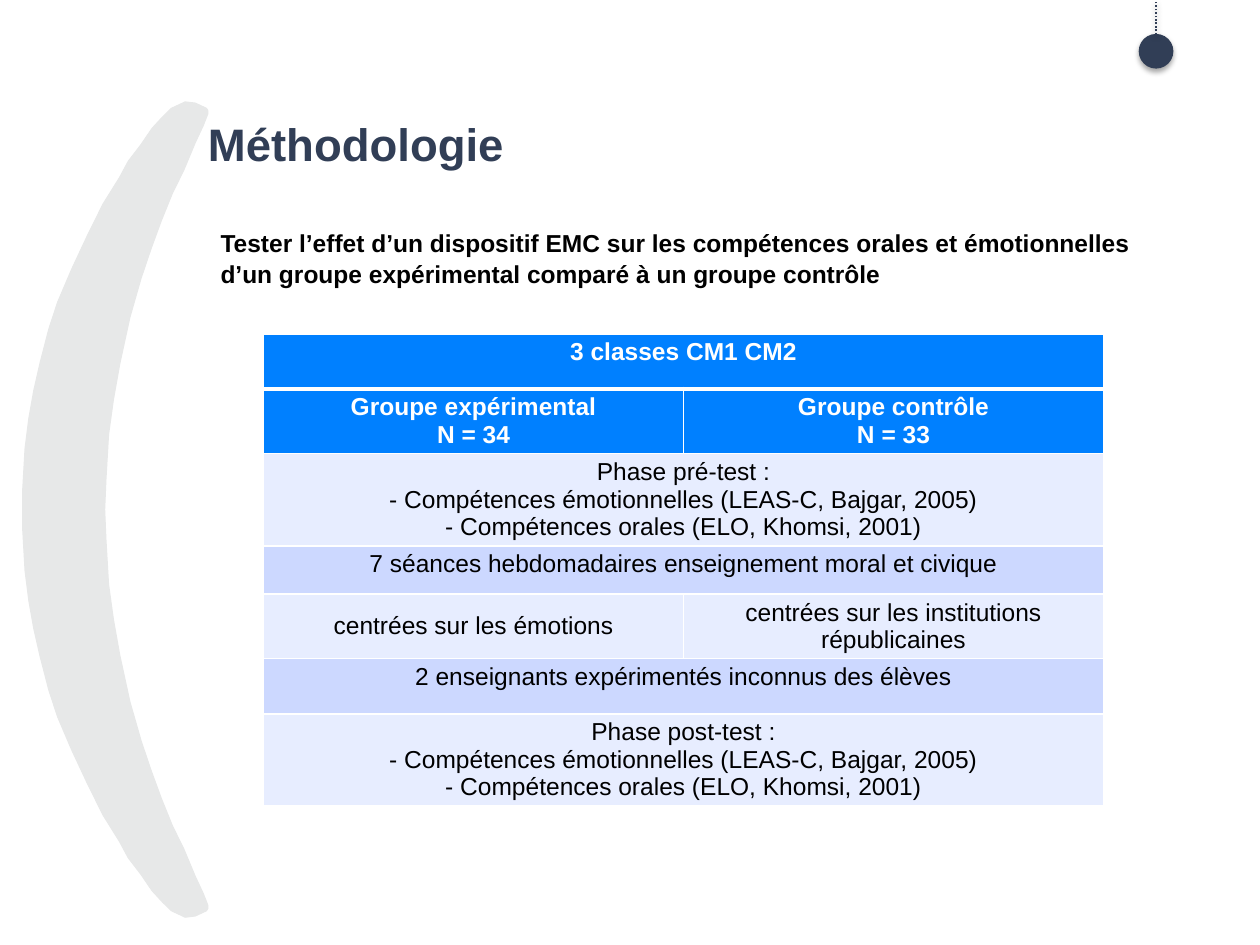
import dataclasses

import pptx
import pptx.dml.color
import pptx.enum.dml
import pptx.enum.shapes
import pptx.enum.text
import pptx.oxml
import pptx.oxml.ns
import pptx.util

Pt = pptx.util.Pt
RGB = pptx.dml.color.RGBColor.from_string
ALIGN = pptx.enum.text.PP_ALIGN
ANCHOR = pptx.enum.text.MSO_ANCHOR
NAMESPACE = pptx.oxml.ns.nsdecls("a")


@dataclasses.dataclass(frozen=True)
class Theme:
    font: str = "Arial"
    title_size: int = 26
    text_size: int = 14
    navy: str = "313E56"
    black: str = "000000"
    white: str = "FFFFFF"
    crescent: str = "E7E8E8"
    header: str = "0080FF"
    light: str = "E7EDFF"
    medium: str = "CCD8FF"


theme = Theme()


def add_text(paragraph, text, size, color, bold, align):
    paragraph.alignment = align
    run = paragraph.add_run()
    run.text = text
    run.font.name = theme.font
    run.font.size = Pt(size)
    run.font.bold = bold
    run.font.color.rgb = RGB(color)


def add_shadow(shape, opacity, distance):
    properties = shape._element.spPr
    for effects in properties.findall(pptx.oxml.ns.qn("a:effectLst")):
        properties.remove(effects)
    properties.append(pptx.oxml.parse_xml(
        f'<a:effectLst {NAMESPACE}><a:outerShdw blurRad="{Pt(3.1)}" dist="{Pt(distance)}" '
        f'dir="5400000" rotWithShape="0"><a:srgbClr val="{theme.black}">'
        f'<a:alpha val="{opacity * 1000}"/></a:srgbClr></a:outerShdw></a:effectLst>'))


presentation = pptx.Presentation()
presentation.slide_width, presentation.slide_height = Pt(720), Pt(540)
slide = presentation.slides.add_slide(presentation.slide_layouts[1])

# Crescent: the upper half is listed, the lower half is its mirror
middle = 291.2
outer = [(118.8, 64.8), (118.8, 63.4), (118, 62), (111.6, 59), (105.8, 58.3), (104.4, 59),
         (98, 62), (92.9, 67), (87, 73.4), (80.6, 82.8), (73.4, 92.2), (68.4, 101.5),
         (59, 116.6), (49.7, 135.4), (41, 154), (33, 172.8), (28, 188), (23, 207.4),
         (19.4, 223.2), (16.6, 239), (14.4, 256.3), (13, 280.8)]
inner = [(59.8, middle), (60.5, 274.3), (62, 248.4), (64.8, 228.2), (68.4, 208),
         (74.2, 181.4), (80.6, 159), (86.4, 141.8), (92.2, 126), (98.6, 110.2),
         (105, 97.2), (111.6, 81.4), (116, 72), (118, 67)]
upper = inner + outer
lower = [(x, 2 * middle - y) for x, y in reversed(upper)]
outline = [(Pt(x), Pt(y)) for x, y in upper + lower]
builder = slide.shapes.build_freeform(*outline[0], scale=1.0)
builder.add_line_segments(outline[1:], close=True)
crescent = builder.convert_to_shape()
crescent.shadow.inherit = False
crescent.fill.solid()
crescent.fill.fore_color.rgb = RGB(theme.crescent)
crescent.line.color.rgb = RGB(theme.crescent)
crescent.line.width = Pt(0.75)

# Hanging ball and its dotted thread
ball = slide.shapes.add_shape(
    pptx.enum.shapes.MSO_SHAPE.OVAL, Pt(650.7), Pt(19.4), Pt(19.8), Pt(19.8))
ball.fill.solid()
ball.fill.fore_color.rgb = RGB(theme.navy)
ball.line.fill.background()
add_shadow(ball, 35, 1.8)

thread = slide.shapes.add_connector(
    pptx.enum.shapes.MSO_CONNECTOR.STRAIGHT, Pt(660.6), Pt(19.8), Pt(660.6), Pt(0))
thread.line.color.rgb = RGB(theme.navy)
thread.line.width = Pt(1)
thread.line.dash_style = pptx.enum.dml.MSO_LINE.ROUND_DOT
add_shadow(thread, 38, 1.6)

# Title
title = slide.shapes.title
title.left, title.top, title.width, title.height = Pt(118.8), Pt(66.2), Pt(565.2), Pt(50.4)
frame = title.text_frame
frame.auto_size = pptx.enum.text.MSO_AUTO_SIZE.NONE
frame.vertical_anchor = ANCHOR.TOP
frame.margin_left = frame.margin_top = frame.margin_right = frame.margin_bottom = 0
add_text(frame.paragraphs[0], "Méthodologie", theme.title_size, theme.navy, True, ALIGN.LEFT)

# Aim of the study
body = slide.placeholders[1]
body.left, body.top, body.width, body.height = Pt(118.8), Pt(126), Pt(565.2), Pt(356.4)
frame = body.text_frame
frame.auto_size = pptx.enum.text.MSO_AUTO_SIZE.NONE
frame.margin_right = Pt(14)
paragraph = frame.paragraphs[0]
properties = paragraph._p.get_or_add_pPr()
properties.set("marL", "0")
properties.set("indent", "0")
properties.append(pptx.oxml.parse_xml(f"<a:buNone {NAMESPACE}/>"))
paragraph.space_before = Pt(0)
paragraph.line_spacing = 1.05
add_text(paragraph, "Tester l’effet d’un dispositif EMC sur les compétences orales et émotionnelles "
         "d’un groupe expérimental comparé à un groupe contrôle",
         theme.text_size, theme.black, True, ALIGN.LEFT)

# Protocol table: height, fill and cells of each row; a single cell spans both columns
skills = ["- Compétences émotionnelles (LEAS-C, Bajgar, 2005)",
          "- Compétences orales (ELO, Khomsi, 2001)"]
rows = [
    (31.5, theme.header, [["3 classes CM1 CM2"]]),
    (37, theme.header, [["Groupe expérimental", "N = 34"], ["Groupe contrôle", "N = 33"]]),
    (52.5, theme.light, [["Phase pré-test :"] + skills]),
    (27.5, theme.medium, [["7 séances hebdomadaires enseignement moral et civique"]]),
    (37, theme.light, [["centrées sur les émotions"],
                       ["centrées sur les institutions républicaines"]]),
    (31.5, theme.medium, [["2 enseignants expérimentés inconnus des élèves"]]),
    (52.5, theme.light, [["Phase post-test :"] + skills]),
]
table = slide.shapes.add_table(
    len(rows), 2, Pt(150.6), Pt(190.8), Pt(480), Pt(sum(row[0] for row in rows))).table
for column in table.columns:
    column.width = Pt(240)

for row_index, (height, fill, texts) in enumerate(rows):
    table.rows[row_index].height = Pt(height)
    is_header = fill == theme.header
    for column_index in range(2):
        cell = table.cell(row_index, column_index)
        cell_properties = cell._tc.get_or_add_tcPr()
        for side in ("L", "R", "T", "B"):
            thick = (row_index, side) in ((0, "B"), (1, "T"))
            cell_properties.append(pptx.oxml.parse_xml(
                f'<a:ln{side} {NAMESPACE} w="{Pt(3 if thick else 1)}"><a:solidFill>'
                f'<a:srgbClr val="{theme.white}"/></a:solidFill></a:ln{side}>'))
        cell.fill.solid()
        cell.fill.fore_color.rgb = RGB(fill)
        cell.margin_left = cell.margin_right = Pt(5)
        cell.margin_top = cell.margin_bottom = Pt(2.7)
    if len(texts) == 1:
        table.cell(row_index, 0).merge(table.cell(row_index, 1))
    for column_index, lines in enumerate(texts):
        cell = table.cell(row_index, column_index)
        centred = len(texts) == 2 and not is_header
        cell.vertical_anchor = ANCHOR.MIDDLE if centred else ANCHOR.TOP
        for line_index, line in enumerate(lines):
            frame = cell.text_frame
            paragraph = frame.add_paragraph() if line_index else frame.paragraphs[0]
            add_text(paragraph, line, theme.text_size,
                     theme.white if is_header else theme.black, is_header, ALIGN.CENTER)

presentation.save("out.pptx")
